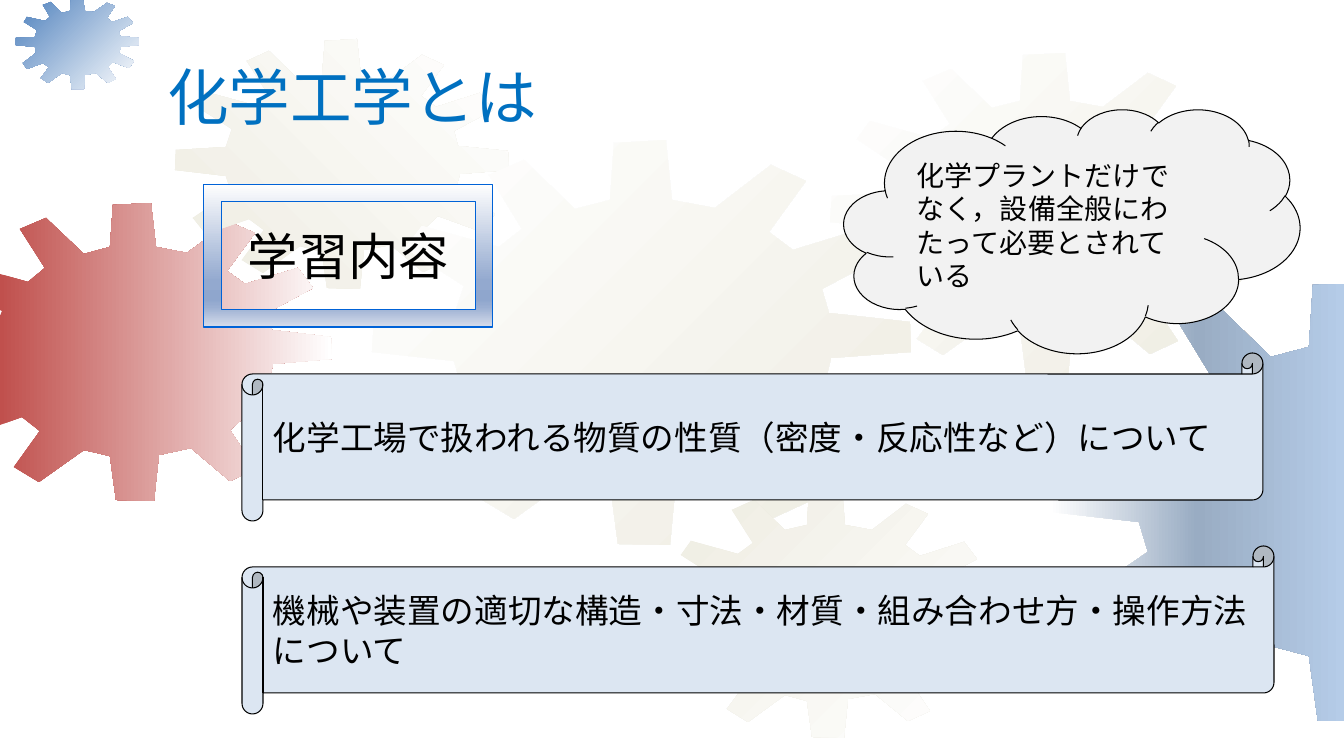
from lxml.etree import SubElement
from pptx import Presentation
from pptx.dml.color import RGBColor
from pptx.enum.shapes import MSO_SHAPE
from pptx.enum.text import MSO_ANCHOR, MSO_AUTO_SIZE, PP_ALIGN
from pptx.oxml import parse_xml
from pptx.oxml.ns import nsdecls, qn
from pptx.util import Emu, Pt

SCALE = 914400 / 100.8
SLIDE_W, SLIDE_H = 1344, 756
CJK_FONT = "Noto Sans CJK JP"

COLORS = {
    "red": "C0504D", "blue": "4F81BD", "cream": "EEECE1", "white": "FFFFFF",
    "slate": "99ACC3", "sky": "B5CCE8", "title": "0070C0", "text": "000000",
    "scroll": "DCE6F2", "cloud": "F2F2F2", "frame_line": "0062D7",
    "frame_top": "FEFEFE", "frame_mid": "93A9CF", "frame_dark": "8FA6CD",
    "frame_low": "9BAFD2", "frame_bottom": "D7DDEB",
}

GEAR_W, GEAR_H = 535, 401
GEAR_OUTLINE = [
    (340, 67), (298, 59), (292, 0), (240, 3), (236, 59), (201, 68),
    (151, 20), (116, 35), (149, 88), (126, 106), (50, 85), (33, 107),
    (91, 145), (81, 174), (2, 178), (0, 210), (81, 219), (89, 246),
    (29, 287), (50, 312), (118, 288), (143, 307), (108, 355), (141, 375),
    (201, 332), (236, 341), (244, 400), (296, 401), (302, 339), (346, 330),
    (398, 374), (433, 358), (398, 306), (422, 284), (491, 309), (512, 281),
    (449, 246), (456, 216), (535, 210), (534, 180), (454, 171), (447, 148),
    (510, 114), (489, 87), (418, 109), (394, 91), (431, 41), (396, 25),
]

# Box in px, gradient angle, gradient stops, opacity in percent
GEARS = [
    ((-66, 203, 398, 298), 0, [(0, "red"), (100, "white")], 100),
    ((16, -3, 123, 92), 45, [(0, "blue"), (100, "white")], 100),
    ((175, 39, 334, 250), 315, [(0, "cream"), (100, "white")], 100),
    ((372, 140, 539, 405), 45, [(0, "white"), (100, "cream")], 100),
    ((0, 529, 502, 377), 0, [(0, "white"), (100, "white")], 50),
    ((660, 488, 333, 250), 45, [(0, "cream"), (100, "white")], 100),
    ((830, 53, 430, 323), 45, [(0, "white"), (100, "cream")], 100),
    ((1050, 282, 587, 440), 0, [(0, "white"), (50, "slate"), (100, "sky")], 100),
]

FRAME_STOPS = [(0, "frame_top"), (68, "frame_mid"), (81, "frame_dark"),
               (86, "frame_low"), (100, "frame_bottom")]


def px(length):
    return Emu(round(length * SCALE))


def rgb(color):
    return RGBColor.from_string(COLORS[color])


def fill_gradient(shape, angle, stops, opacity=100):
    stop_xml = "".join(
        f'<a:gs pos="{position * 1000}"><a:srgbClr val="{COLORS[color]}">'
        f'<a:alpha val="{opacity * 1000}"/></a:srgbClr></a:gs>'
        for position, color in stops)
    gradient = parse_xml(
        f'<a:gradFill {nsdecls("a")} rotWithShape="1"><a:gsLst>{stop_xml}</a:gsLst>'
        f'<a:lin ang="{angle * 60000}" scaled="0"/></a:gradFill>')
    shape.fill.background()
    properties = shape._element.spPr
    properties.replace(properties.find(qn("a:noFill")), gradient)


def clip(points, axis, limit, sign):
    """Keep the part of a polygon where sign * (coordinate - limit) >= 0."""
    kept = []
    for start, end in zip(points, points[1:] + points[:1]):
        start_gap = sign * (start[axis] - limit)
        end_gap = sign * (end[axis] - limit)
        if start_gap >= 0:
            kept.append(start)
        if start_gap * end_gap < 0:
            share = start_gap / (start_gap - end_gap)
            kept.append(tuple(a + share * (b - a) for a, b in zip(start, end)))
    return kept


def add_gear(slide, box, angle, stops, opacity):
    left, top, width, height = box
    outline = [(left + x * width / GEAR_W, top + y * height / GEAR_H)
               for x, y in GEAR_OUTLINE]
    for axis, limit, sign in ((0, 0, 1), (1, 0, 1),
                              (0, SLIDE_W, -1), (1, SLIDE_H, -1)):
        outline = clip(outline, axis, limit, sign)
    builder = slide.shapes.build_freeform(*outline[0], scale=SCALE)
    builder.add_line_segments(outline[1:], close=True)
    gear = builder.convert_to_shape()
    gear.shadow.inherit = False
    gear.line.fill.background()
    fill_gradient(gear, angle, stops, opacity)


def write_text(shape, text, size, font, color="text", align=PP_ALIGN.LEFT):
    frame = shape.text_frame
    frame.text = text
    frame.word_wrap = True
    frame.auto_size = MSO_AUTO_SIZE.NONE
    frame.vertical_anchor = MSO_ANCHOR.MIDDLE
    paragraph = frame.paragraphs[0]
    paragraph.alignment = align
    run = paragraph.runs[0]
    run.font.size = Pt(size)
    run.font.name = font
    run.font.color.rgb = rgb(color)
    SubElement(run.font._element, qn("a:ea")).set("typeface", CJK_FONT)


def add_panel(slide, preset, box, line_color="text", fill_color=None):
    panel = slide.shapes.add_shape(preset, *map(px, box))
    panel.shadow.inherit = False
    panel.line.color.rgb = rgb(line_color)
    panel.line.width = Pt(0.75)
    if fill_color:
        panel.fill.solid()
        panel.fill.fore_color.rgb = rgb(fill_color)
    return panel


def place_title(slide, text):
    title = slide.shapes.title
    title.left, title.top, title.width, title.height = map(px, (157, 33, 1142, 126))
    write_text(title, text, 44, "Arial", "title")
    slide.shapes._spTree.append(title._element)


def main():
    deck = Presentation()
    deck.slide_width, deck.slide_height = px(SLIDE_W), px(SLIDE_H)
    slide = deck.slides.add_slide(deck.slide_layouts[5])

    for gear in GEARS:
        add_gear(slide, *gear)
    place_title(slide, "化学工学とは")

    for top, width, topic in (
        (353, 1021, "化学工場で扱われる物質の性質（密度・反応性など）について"),
        (546, 1032, "機械や装置の適切な構造・寸法・材質・組み合わせ方・操作方法について"),
    ):
        scroll = add_panel(slide, MSO_SHAPE.HORIZONTAL_SCROLL,
                           (242, top, width, 168), fill_color="scroll")
        write_text(scroll, topic, 24, CJK_FONT)

    contents = add_panel(slide, MSO_SHAPE.FRAME, (204, 184, 289, 143), "frame_line")
    fill_gradient(contents, 90, FRAME_STOPS)
    write_text(contents, "学習内容", 36, "Arial Narrow", align=PP_ALIGN.CENTER)

    remark = add_panel(slide, MSO_SHAPE.CLOUD, (844, 109, 456, 244), fill_color="cloud")
    write_text(remark, "化学プラントだけでなく，設備全般にわたって必要とされている", 20, CJK_FONT)

    deck.save("out.pptx")


if __name__ == "__main__":
    main()
